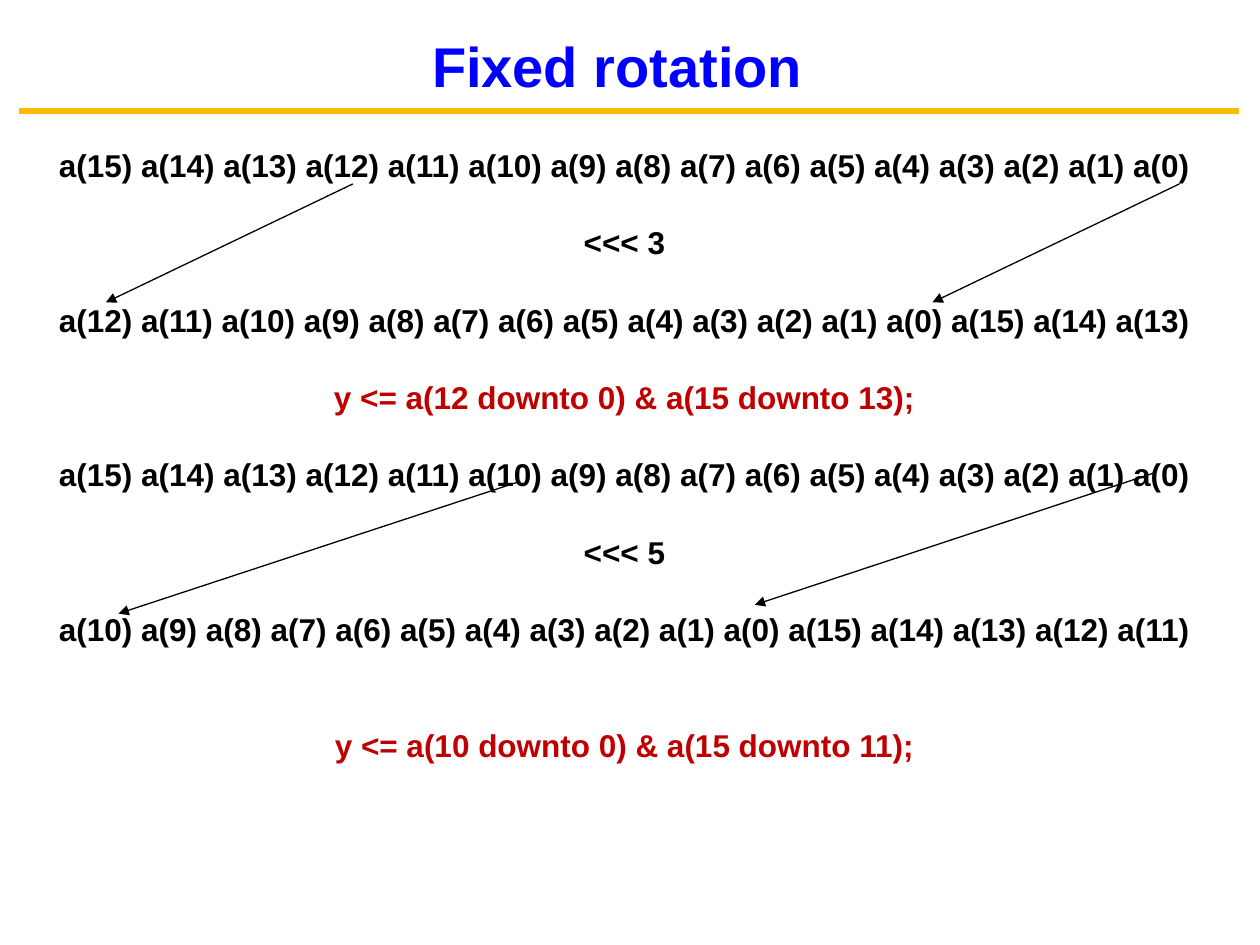
from pptx import Presentation
from pptx.dml.color import RGBColor as RGB
from pptx.enum.shapes import MSO_CONNECTOR as CONN
from pptx.enum.text import MSO_ANCHOR as ANCHOR, MSO_AUTO_SIZE as FIT, PP_ALIGN as ALIGN
from pptx.oxml.ns import qn
from pptx.util import Inches, Pt
from lxml import etree

BLACK = RGB(0, 0, 0)
BLUE = RGB(0, 0, 255)
RED = RGB(0xC0, 0, 0)
GOLD = RGB(0xFB, 0xBA, 0x03)


def add_line(ends, color, width, arrow=False):
    line = slide.shapes.add_connector(CONN.STRAIGHT, *map(Inches, ends))
    line.line.color.rgb = color
    line.line.width = Pt(width)
    if arrow:
        etree.SubElement(line.line._get_or_add_ln(), qn("a:tailEnd"), type="triangle")
    etree.SubElement(line._element.spPr, qn("a:effectLst"))


def style(para, size, color, align):
    para.alignment = align
    font = para.font
    font.name, font.size, font.bold = "Arial", Pt(size), True
    font.color.rgb = color


deck = Presentation()
deck.slide_width, deck.slide_height = Inches(10), Inches(7.5)
slide = deck.slides.add_slide(deck.slide_layouts[5])

add_line((0.15, 0.88, 9.83, 0.88), GOLD, 3.75)

bits = [f"a({i})" for i in range(15, -1, -1)]
rows = []
for shift in (3, 5):
    top = 15 - shift
    rows += [
        (" ".join(bits), BLACK, ALIGN.LEFT),
        (f"<<< {shift}", BLACK, ALIGN.CENTER),
        (" ".join(bits[shift:] + bits[:shift]), BLACK, ALIGN.LEFT),
        (f"y <= a({top} downto 0) & a(15 downto {top + 1});", RED, ALIGN.CENTER),
    ]

body = slide.shapes.add_textbox(Inches(0.37), Inches(1.11), Inches(9.26), Inches(4.95))
frame = body.text_frame
frame.word_wrap = False
frame.auto_size = FIT.SHAPE_TO_FIT_TEXT
for n, (text, color, align) in enumerate(rows):
    para = frame.add_paragraph() if n else frame.paragraphs[0]
    para.text = text
    style(para, 18, color, align)
    para.space_before = Pt(22.6 if n else 0)
para.space_before = Pt(44.4)

title = slide.shapes.title
title.left, title.top = Inches(3.32), Inches(0.2)
title.width, title.height = Inches(3.16), Inches(0.64)
frame = title.text_frame
frame.text = "Fixed rotation"
frame.word_wrap = False
frame.auto_size = FIT.SHAPE_TO_FIT_TEXT
frame.vertical_anchor = ANCHOR.TOP
style(frame.paragraphs[0], 32, BLUE, ALIGN.CENTER)

for ends in (
    (9.36, 1.46, 7.4, 2.4),
    (2.8, 1.46, 0.84, 2.4),
    (9.17, 3.75, 5.99, 4.8),
    (4.13, 3.82, 0.94, 4.87),
):
    add_line(ends, BLACK, 0.75, arrow=True)

deck.save("out.pptx")
